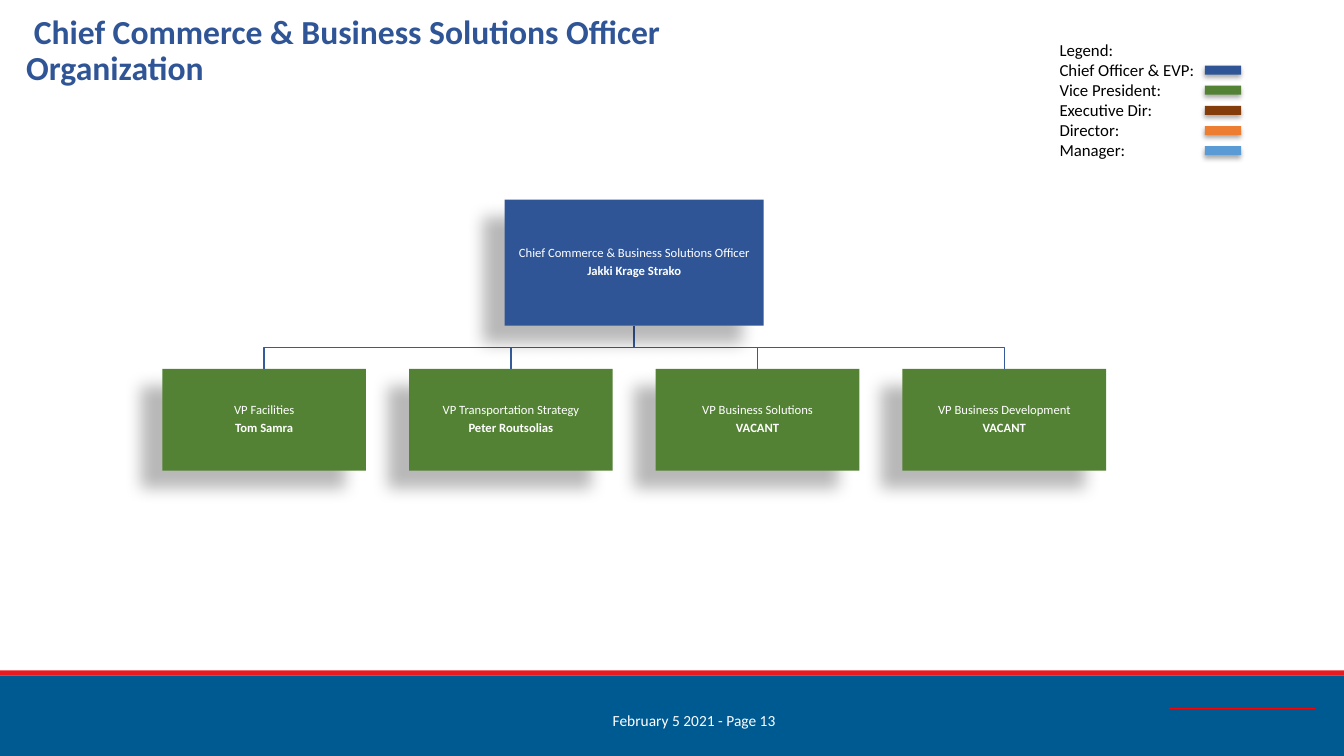
from lxml import etree
from pptx import Presentation
from pptx import util as u
from pptx.dml.color import RGBColor
from pptx.enum import shapes, text
from pptx.oxml import ns

FONT = "Calibri"
NAVY = RGBColor(0x2F, 0x55, 0x97)
GREEN = RGBColor(0x54, 0x82, 0x35)
BROWN = RGBColor(0x84, 0x3C, 0x0B)
ORANGE = RGBColor(0xED, 0x7D, 0x31)
SKY = RGBColor(0x5B, 0x9B, 0xD5)
BRANCH = RGBColor(0x36, 0x5B, 0x9D)
BAND_RED = RGBColor(0xE7, 0x19, 0x21)
BAND_BLUE = RGBColor(0x00, 0x5A, 0x92)
RED = RGBColor(0xFF, 0x00, 0x00)
WHITE = RGBColor(0xFF, 0xFF, 0xFF)
BLACK = RGBColor(0x00, 0x00, 0x00)

BOX_SHADOW = (28, 11.8, 19.7, 141)
SWATCH_SHADOW = (32, 3.5, 2.2, 90)
OFFICER = ("Chief Commerce & Business Solutions Officer", "Jakki Krage Strako")
VICE_PRESIDENTS = [
    ("VP Facilities", "Tom Samra"),
    ("VP Transportation Strategy", "Peter Routsolias"),
    ("VP Business Solutions", "VACANT"),
    ("VP Business Development", "VACANT"),
]
LEVELS = [
    ("Chief Officer & EVP:", NAVY),
    ("Vice President:", GREEN),
    ("Executive Dir:", BROWN),
    ("Director:", ORANGE),
    ("Manager:", SKY),
]


def add_run(p, words, size, color, bold=False):
    r = p.add_run()
    r.text = words
    r.font.name = FONT
    r.font.size = u.Pt(size)
    r.font.bold = bold
    r.font.color.rgb = color


def add_shadow(sp, opacity, blur, distance, angle):
    effects = sp._element.spPr.find(ns.qn("a:effectLst"))
    outer = etree.SubElement(
        effects, ns.qn("a:outerShdw"), blurRad=str(u.Pt(blur)),
        dist=str(u.Pt(distance)), dir=str(angle * 60000),
        algn="ctr", rotWithShape="0")
    color = etree.SubElement(outer, ns.qn("a:srgbClr"), val=str(BLACK))
    etree.SubElement(color, ns.qn("a:alpha"), val=str(opacity * 1000))


def add_rect(s, left, top, width, height, fill, shadow=None):
    sp = s.shapes.add_shape(shapes.MSO_SHAPE.RECTANGLE, u.Inches(left),
                            u.Inches(top), u.Inches(width), u.Inches(height))
    sp.shadow.inherit = False
    sp.fill.solid()
    sp.fill.fore_color.rgb = fill
    sp.line.fill.background()
    if shadow:
        add_shadow(sp, *shadow)
    return sp


def add_title(s, left, top, width, height):
    title = s.shapes.title
    title.left, title.top = u.Inches(left), u.Inches(top)
    title.width, title.height = u.Inches(width), u.Inches(height)
    tf = title.text_frame
    tf.auto_size = text.MSO_AUTO_SIZE.NONE
    tf.word_wrap = True
    tf.vertical_anchor = text.MSO_ANCHOR.MIDDLE
    p = tf.paragraphs[0]
    p.alignment = text.PP_ALIGN.LEFT
    p.line_spacing = 0.9
    add_run(p, " Chief Commerce & Business Solutions Officer Organization",
            24, NAVY, True)


def add_footer(s, left, top, width, height):
    add_rect(s, left, top, width, 0.05, BAND_RED)
    add_rect(s, left, top + 0.05, width, height - 0.05, BAND_BLUE)
    label = s.shapes.add_textbox(u.Inches(left + 5.45), u.Inches(top + 0.36),
                                 u.Inches(2.87), u.Inches(0.29))
    label.text_frame.word_wrap = True
    p = label.text_frame.paragraphs[0]
    p.alignment = text.PP_ALIGN.CENTER
    add_run(p, "February 5 2021 - Page 13", 11, WHITE)
    rule_y = u.Inches(top + 0.38)
    rule = s.shapes.add_connector(
        shapes.MSO_CONNECTOR.STRAIGHT, u.Inches(left + 11.59), rule_y,
        u.Inches(left + 13.04), rule_y)
    rule.line.color.rgb = RED
    rule.line.width = u.Pt(1)
    etree.SubElement(rule._element.spPr, ns.qn("a:effectLst"))


def add_post(s, left, top, width, height, fill, role, holder):
    sp = add_rect(s, left, top, width, height, fill, BOX_SHADOW)
    tf = sp.text_frame
    tf.word_wrap = True
    tf.vertical_anchor = text.MSO_ANCHOR.MIDDLE
    tf.margin_left = tf.margin_right = u.Inches(0.01)
    tf.margin_top = tf.margin_bottom = u.Inches(0.01)
    for p, words, bold in ((tf.paragraphs[0], role, False),
                           (tf.add_paragraph(), holder, True)):
        p.alignment = text.PP_ALIGN.CENTER
        p.line_spacing = 0.9
        p.space_after = u.Pt(3.15)
        add_run(p, words, 9, WHITE, bold)


def add_branch(s, start_x, start_y, end_x, end_y):
    mid_y = (start_y + end_y) / 2
    builder = s.shapes.build_freeform(u.Inches(start_x), u.Inches(start_y))
    builder.add_line_segments(
        [(u.Inches(x), u.Inches(y)) for x, y in
         ((start_x, mid_y), (end_x, mid_y), (end_x, end_y))], close=False)
    sp = builder.convert_to_shape()
    sp.shadow.inherit = False
    sp.fill.background()
    sp.line.color.rgb = BRANCH
    sp.line.width = u.Pt(1)


def add_org_chart(s, left, top, width, height):
    root_w, root_h, vp_w, vp_h = 2.57, 1.25, 2.02, 1.01
    center = left + width / 2
    vp_top = top + height - vp_h
    pitch = (width - vp_w) / (len(VICE_PRESIDENTS) - 1)
    lefts = [left + i * pitch for i in range(len(VICE_PRESIDENTS))]
    for vp_left in lefts:
        add_branch(s, center, top + root_h, vp_left + vp_w / 2, vp_top)
    add_post(s, center - root_w / 2, top, root_w, root_h, NAVY, *OFFICER)
    for vp_left, post in zip(lefts, VICE_PRESIDENTS):
        add_post(s, vp_left, vp_top, vp_w, vp_h, GREEN, *post)


def add_legend(s, left, top, width, height):
    box = s.shapes.add_textbox(u.Inches(left), u.Inches(top),
                               u.Inches(width), u.Inches(height))
    tf = box.text_frame
    tf.word_wrap = True
    add_run(tf.paragraphs[0], "Legend:", 12, BLACK)
    for i, (level, color) in enumerate(LEVELS):
        add_run(tf.add_paragraph(), level, 12, BLACK)
        add_rect(s, left + 1.54, top + 0.31 + i * 0.2, 0.36, 0.09,
                 color, SWATCH_SHADOW)


def main():
    prs = Presentation()
    prs.slide_width, prs.slide_height = u.Inches(13.33), u.Inches(7.5)
    s = prs.slides.add_slide(prs.slide_layouts[5])
    add_footer(s, 0, 6.65, 13.33, 0.85)
    add_title(s, 0.16, 0, 8.17, 1.03)
    add_org_chart(s, 1.61, 1.98, 9.36, 2.69)
    add_legend(s, 10.41, 0.34, 2.61, 1.31)
    prs.save("out.pptx")


if __name__ == "__main__":
    main()
